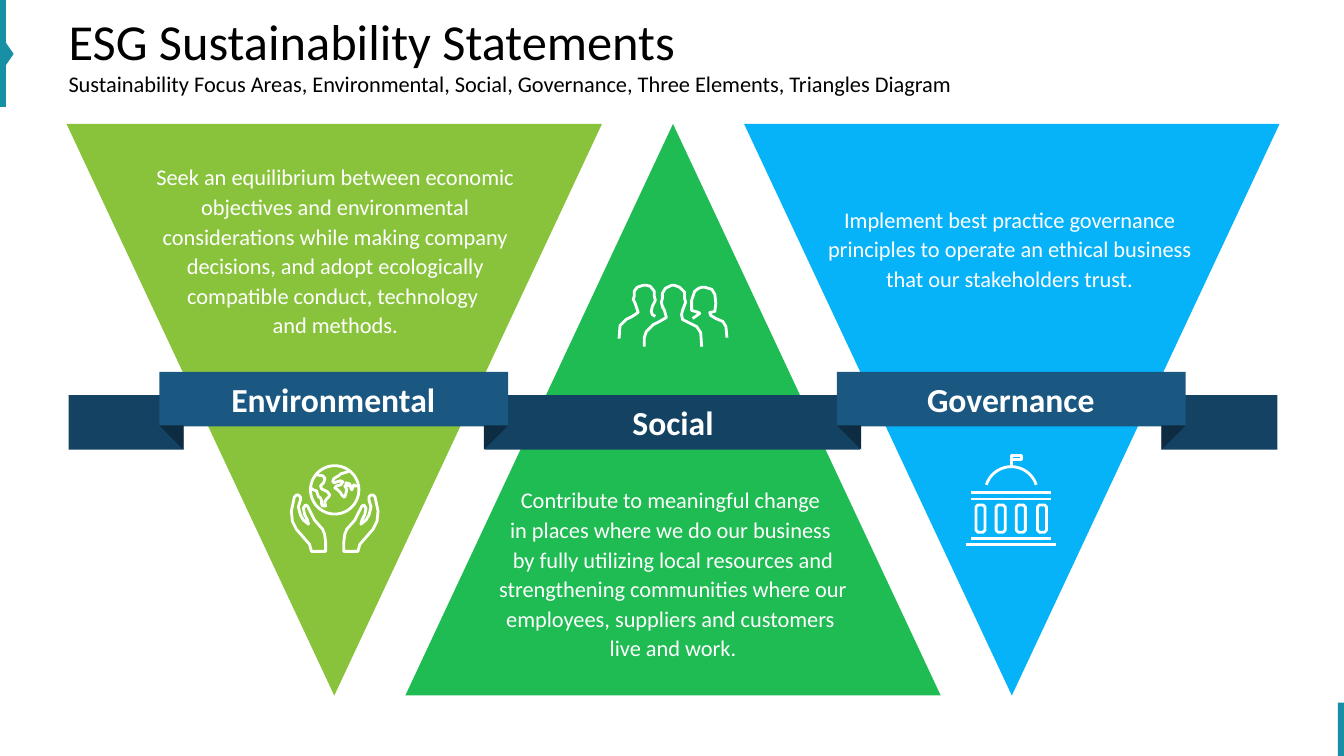
"""Build the ESG sustainability statements slide."""
from math import cos, radians, sin

from pptx import Presentation
from pptx.dml.color import RGBColor
from pptx.enum.shapes import MSO_SHAPE
from pptx.enum.text import MSO_ANCHOR, PP_ALIGN
from pptx.util import Pt

PX = 9144
RECTANGLE = MSO_SHAPE.RECTANGLE
TRIANGLE = MSO_SHAPE.ISOSCELES_TRIANGLE
FOLD = MSO_SHAPE.RIGHT_TRIANGLE
MIDDLE = MSO_ANCHOR.MIDDLE
LEFT, CENTER = PP_ALIGN.LEFT, PP_ALIGN.CENTER
FONT = "Calibri"
COLORS = {
    "accent": "1790A6", "black": "000000", "white": "FFFFFF",
    "environmental": "88C33B", "social": "1FBB53", "governance": "06B3F9",
    "front": "1A5882", "back": "134262", "fold": "0D2C41",
}

TRIANGLE_LEFT, TRIANGLE_STEP = 66, 336
BAND_INSET, BAND_WIDTH, BAND_HEIGHT, FOLD_SIZE = 92, 346, 54, 24
PILLARS = [
    ("environmental", 180, (145, 127, 375, 241),
     ["Seek an equilibrium between economic objectives and environmental considerations "
      "while making company decisions, and adopt ecologically compatible conduct, technology ",
      "and methods."]),
    ("social", 0, (465, 446, 405, 244),
     ["Contribute to meaningful change ", "in places where we do our business ",
      "by fully utilizing local resources and strengthening communities where our "
      "employees, suppliers and customers ", "live and work."]),
    ("governance", 180, (815, 123, 373, 245),
     ["Implement best practice governance principles to operate an ethical business "
      "that our stakeholders trust."]),
]
BACK_BANDS = [(68, 114), (481, 372), (1152, 115)]
LABELS = [("Environmental", 211, 374, 239), ("Social", 554, 397, 227),
          ("Governance", 883, 374, 239)]

PEOPLE = [
    [(687, 316), (694, 311), (693, 310), (686, 308), (686, 298), (689, 289), (693, 286),
     (696, 285), (699, 285), (706, 287), (709, 292), (710, 301), (709, 309), (704, 310),
     (705, 313), (710, 316), (717, 319), (720, 324), (721, 335)],
    [(696, 344), (695, 330), (691, 324), (683, 320), (677, 317), (676, 312), (677, 308),
     (680, 300), (679, 296), (679, 290), (674, 285), (669, 283), (666, 283), (660, 286),
     (657, 291), (657, 296), (656, 300), (657, 304), (659, 308), (661, 315), (654, 319),
     (648, 322), (641, 329), (639, 335), (639, 344)],
    [(650, 314), (647, 312), (646, 309), (647, 304), (650, 298), (649, 294), (649, 289),
     (645, 284), (641, 283), (638, 283), (632, 285), (629, 289), (629, 294), (628, 297),
     (630, 301), (631, 304), (633, 310), (627, 314), (621, 317), (615, 323), (614, 336)],
]
HAND = [(355, 547), (341, 547), (341, 538), (342, 530), (344, 525), (352, 516), (356, 508),
        (359, 502), (361, 501), (363, 504), (362, 510), (359, 516), (358, 520), (363, 516),
        (366, 511), (368, 503), (366, 496), (366, 493), (368, 491), (370, 491), (372, 493),
        (375, 507), (374, 517), (370, 525), (357, 540), (355, 547)]
CONTINENTS = [
    [(308, 484), (311, 486), (314, 487), (315, 490), (316, 493), (318, 494), (319, 497),
     (319, 500), (320, 502), (323, 502), (322, 498), (324, 495), (326, 493), (327, 491),
     (325, 488), (321, 486), (319, 485), (318, 482), (321, 479), (322, 476), (322, 474),
     (320, 472), (313, 471)],
    [(347, 467), (342, 469), (338, 470), (336, 472), (334, 473), (331, 475), (330, 478),
     (332, 479), (334, 478), (338, 477), (340, 478), (338, 481), (334, 482), (332, 484),
     (335, 486), (338, 489), (339, 491), (341, 493), (342, 493), (343, 490), (344, 486),
     (342, 482), (345, 482), (343, 479), (347, 480), (348, 484), (349, 486), (350, 483),
     (351, 481), (352, 482), (356, 482)],
]


def arc(center_x, center_y, radius, start, end):
    """Return points along a circular arc, with angles in degrees."""
    return [(center_x + radius * cos(radians(angle)), center_y + radius * sin(radians(angle)))
            for angle in range(start, end + 1, 6)]


def window(left):
    """Return the outline of one window with cut corners."""
    right, top, bottom = left + 9, 501, 528
    return [(left + 2, top), (right - 2, top), (right, top + 2), (right, bottom - 2),
            (right - 2, bottom), (left + 2, bottom), (left, bottom - 2),
            (left, top + 2), (left + 2, top)]


def earth_strokes():
    """Return the strokes of a globe held in two hands."""
    mirrored = [(664 - x, y) for x, y in HAND]
    return [HAND, mirrored, arc(332, 486, 24, 0, 360)] + CONTINENTS


def building_strokes():
    """Return the strokes of a domed public building."""
    rows = [(963, 1042, 489), (963, 1042, 495), (963, 1042, 534), (958, 1047, 540)]
    lines = [[(left, y), (right, y)] for left, right, y in rows]
    flag = [(1003, 463), (1003, 452), (1013, 452), (1013, 456), (1003, 456)]
    windows = [window(968 + 20 * column + column // 3) for column in range(4)]
    return windows + lines + [flag, arc(1003, 489, 26, 198, 342)]


def add_icon(page, strokes):
    """Draw strokes as one white outline shape."""
    scaled = [[(x * PX, y * PX) for x, y in stroke] for stroke in strokes]
    builder = page.shapes.build_freeform(*scaled[0][0])
    for index, stroke in enumerate(scaled):
        if index:
            builder.move_to(*stroke[0])
        builder.add_line_segments(stroke[1:], close=stroke[0] == stroke[-1])
    icon = builder.convert_to_shape()
    icon.shadow.inherit = False
    icon.fill.background()
    icon.line.color.rgb = RGBColor.from_string(COLORS["white"])
    icon.line.width = Pt(2)


def add_block(page, kind, place, color, rotation=0):
    """Add a filled preset shape without outline."""
    block = page.shapes.add_shape(kind, *(length * PX for length in place))
    block.shadow.inherit = False
    block.fill.solid()
    block.fill.fore_color.rgb = RGBColor.from_string(COLORS[color])
    block.line.fill.background()
    block.rotation = rotation


def add_text(page, place, lines, align=CENTER, margins=(0, 0), bold=False):
    """Add one paragraph of (text, size, color) lines and return it."""
    box = page.shapes.add_textbox(*(length * PX for length in place))
    frame = box.text_frame
    frame.word_wrap = True
    frame.vertical_anchor = MIDDLE
    frame.margin_left, frame.margin_right = (margin * PX for margin in margins)
    para = frame.paragraphs[0]
    para.alignment = align
    for index, (text, size, color) in enumerate(lines):
        if index:
            para.add_line_break()
        span = para.add_run()
        span.text = text
        span.font.name = FONT
        span.font.size = Pt(size)
        span.font.bold = bold
        span.font.color.rgb = RGBColor.from_string(COLORS[color])
    return para


def add_pillar(page, index):
    """Add a triangle with its statement."""
    color, rotation, place, lines = PILLARS[index]
    left = TRIANGLE_LEFT + index * TRIANGLE_STEP
    add_block(page, TRIANGLE, (left, 123, 531, 567), color, rotation)
    para = add_text(page, place, [(line, 16, "white") for line in lines])
    para.line_spacing = 1.1
    para.space_after = Pt(6)


def add_ribbon(page):
    """Add the folded ribbon and its labels."""
    for left, width in BACK_BANDS:
        add_block(page, RECTANGLE, (left, 392, width, BAND_HEIGHT), "back")
    for index in (0, 2):
        left = TRIANGLE_LEFT + index * TRIANGLE_STEP + BAND_INSET
        add_block(page, RECTANGLE, (left, 369, BAND_WIDTH, BAND_HEIGHT), "front")
        for fold_left, rotation in ((left, 180), (left + BAND_WIDTH - FOLD_SIZE, 90)):
            add_block(page, FOLD, (fold_left, 422, FOLD_SIZE, FOLD_SIZE), "fold", rotation)
    for name, left, top, width in LABELS:
        add_text(page, (left, top, width, 44), [(name, 24, "white")],
                 margins=(10, 10), bold=True)


def main():
    """Build the deck and save it."""
    deck = Presentation()
    deck.slide_width, deck.slide_height = 1333 * PX, 750 * PX
    page = deck.slides.add_slide(deck.slide_layouts[6])
    add_block(page, RECTANGLE, (0, 0, 6, 106), "accent")
    add_block(page, TRIANGLE, (-8, 48, 32, 11), "accent", 90)
    add_block(page, RECTANGLE, (1327, 697, 6, 53), "accent")
    add_text(page, (68, 0, 1197, 106),
             [("ESG Sustainability Statements", 36, "black"),
              ("Sustainability Focus Areas, Environmental, Social, Governance, "
               "Three Elements, Triangles Diagram", 16, "black")], LEFT, (0, 10))
    for index in range(len(PILLARS)):
        add_pillar(page, index)
    for strokes in (earth_strokes(), PEOPLE, building_strokes()):
        add_icon(page, strokes)
    add_ribbon(page)
    deck.save("out.pptx")


if __name__ == "__main__":
    main()
